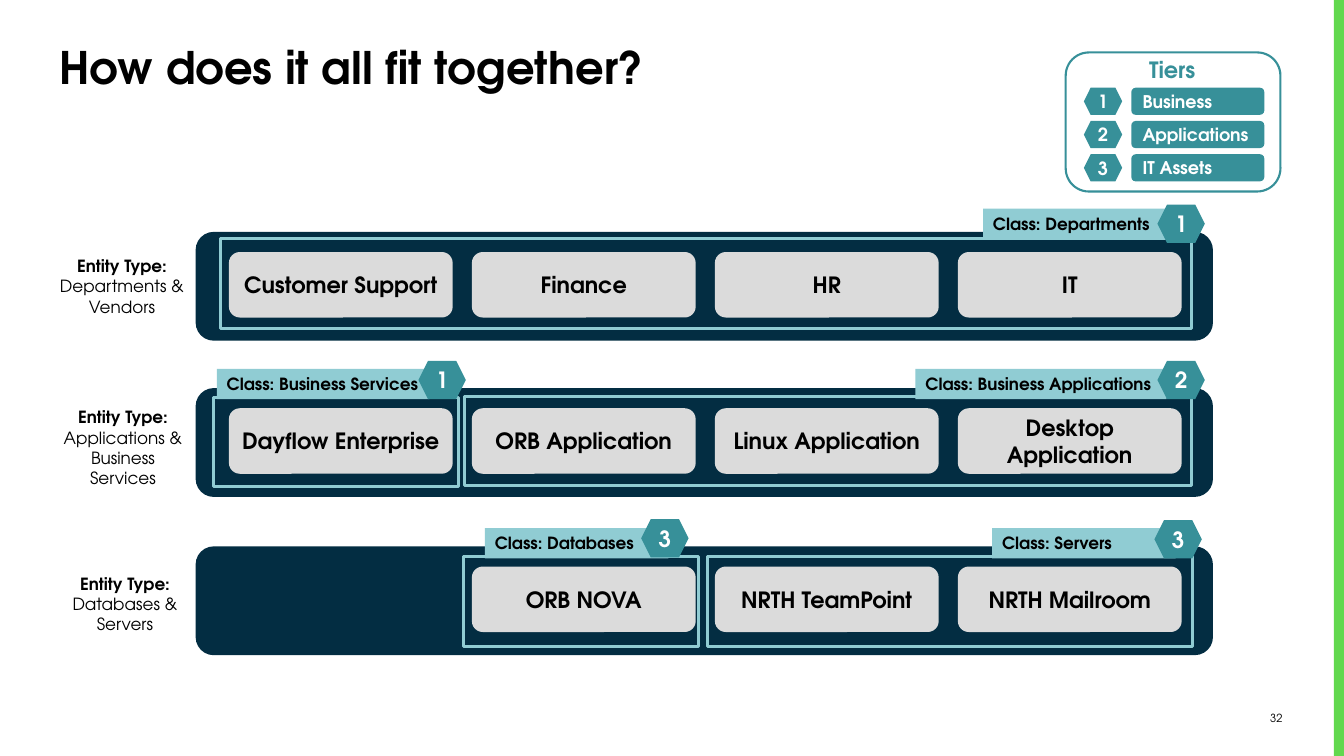
from dataclasses import dataclass

from pptx import Presentation
from pptx.dml.color import RGBColor
from pptx.enum.shapes import MSO_SHAPE
from pptx.enum.text import MSO_ANCHOR, PP_ALIGN
from pptx.util import Inches, Pt

RECT, ROUND, HEXAGON = MSO_SHAPE.RECTANGLE, MSO_SHAPE.ROUNDED_RECTANGLE, MSO_SHAPE.HEXAGON
LEFT, CENTER, RIGHT = PP_ALIGN.LEFT, PP_ALIGN.CENTER, PP_ALIGN.RIGHT
TOP, MIDDLE = MSO_ANCHOR.TOP, MSO_ANCHOR.MIDDLE

FONT = "TeX Gyre Adventor"
BLACK, WHITE, GREEN = "000000", "FFFFFF", "62D84E"
NAVY, TEAL, AQUA, GRAY = "032D42", "379099", "90CCD3", "DBDBDB"

BAND_LEFT, BAND_WIDTH, BAND_HEIGHT = 1.94, 10.09, 1.08
CARD_LEFT, CARD_STEP, CARD_WIDTH, CARD_HEIGHT = 2.27, 2.41, 2.22, 0.65
CARD_DROP = 0.2
FRAME_HEIGHT, TAG_HEIGHT = 0.89, 0.3
LEGEND_TOP, LEGEND_STEP, LEGEND_HEIGHT = 0.87, 0.33, 0.27


@dataclass(frozen=True)
class Box:
    left: float
    top: float
    width: float
    height: float


@dataclass(frozen=True)
class ClassGroup:
    """A framed set of cards with its class tag and tier number."""
    name: str
    tier: str
    frame_left: float
    frame_top: float
    frame_width: float
    tag_left: float
    tag_top: float
    tag_width: float
    badge_left: float
    badge_top: float


@dataclass(frozen=True)
class EntityBand:
    entity: str
    label_left: float
    label_top: float
    top: float
    first_column: int
    cards: tuple[str, ...]
    classes: tuple[ClassGroup, ...]


BANDS = (
    EntityBand("Departments & Vendors", 0.47, 2.49, 2.3, 0,
               ("Customer Support", "Finance", "HR", "IT"),
               (ClassGroup("Departments", "1", 2.19, 2.37, 9.63,
                           9.75, 2.07, 1.82, 11.48, 2.03),)),
    EntityBand("Applications & Business Services", 0.48, 3.99, 3.85, 0,
               ("Dayflow Enterprise", "ORB Application",
                "Linux Application", "Desktop Application"),
               (ClassGroup("Business Applications", "2", 4.61, 3.93, 7.21,
                           9.08, 3.66, 2.49, 11.48, 3.58),
                ClassGroup("Business Services", "1", 2.12, 3.94, 2.43,
                           2.15, 3.66, 2.11, 4.15, 3.58))),
    EntityBand("Databases & Servers", 0.5, 5.64, 5.42, 1,
               ("ORB NOVA", "NRTH TeamPoint", "NRTH Mailroom"),
               (ClassGroup("Servers", "3", 7.02, 5.52, 4.81,
                           9.84, 5.24, 1.82, 11.45, 5.16),
                ClassGroup("Databases", "3", 4.6, 5.52, 2.33,
                           4.81, 5.24, 1.82, 6.36, 5.15))),
)
TIERS = ("Business", "Applications", "IT Assets")


def rgb(value: str) -> RGBColor:
    return RGBColor.from_string(value)


def inches(box: Box) -> list[int]:
    return [Inches(v) for v in (box.left, box.top, box.width, box.height)]


def write(shape, runs: list[tuple[str, bool]], size: float, color: str = BLACK,
          align=LEFT, anchor=MIDDLE, side: float = 0.1, right: float | None = None) -> None:
    """Fill a shape with one paragraph of (text, bold) runs."""
    frame = shape.text_frame
    layout = {"word_wrap": True, "vertical_anchor": anchor,
              "margin_left": Inches(side),
              "margin_right": Inches(side if right is None else right),
              "margin_top": Inches(0.05 if anchor == TOP else 0),
              "margin_bottom": Inches(0.05 if anchor == TOP else 0)}
    for name, value in layout.items():
        setattr(frame, name, value)
    paragraph = frame.paragraphs[0]
    paragraph.alignment = align
    for text, bold in runs:
        run = paragraph.add_run()
        run.text = text
        for name, value in {"name": FONT, "size": Pt(size), "bold": bold}.items():
            setattr(run.font, name, value)
        run.font.color.rgb = rgb(color)


def add_block(shapes, preset, box: Box, fill: str | None = None,
              outline: str | None = None, weight: float = 1):
    block = shapes.add_shape(preset, *inches(box))
    block.shadow.inherit = False
    if fill:
        block.fill.solid()
        block.fill.fore_color.rgb = rgb(fill)
    else:
        block.fill.background()
    if outline:
        block.line.color.rgb = rgb(outline)
        block.line.width = Pt(weight)
    else:
        block.line.fill.background()
    return block


def add_text(shapes, box: Box, runs: list[tuple[str, bool]], size: float,
             color: str = BLACK, align=LEFT) -> None:
    write(shapes.add_textbox(*inches(box)), runs, size, color, align, TOP)


def add_badge(shapes, box: Box, tier: str, size: float) -> None:
    badge = add_block(shapes, HEXAGON, box, TEAL)
    write(badge, [(tier, True)], size, WHITE, CENTER, side=0)


def add_class(shapes, group: ClassGroup) -> None:
    add_block(shapes, RECT, Box(group.frame_left, group.frame_top,
                                group.frame_width, FRAME_HEIGHT),
              outline=AQUA, weight=2.25)
    tag = add_block(shapes, RECT, Box(group.tag_left, group.tag_top,
                                      group.tag_width, TAG_HEIGHT), AQUA)
    write(tag, [(f"Class: {group.name}", True)], 12, right=0)
    add_badge(shapes, Box(group.badge_left, group.badge_top, 0.47, 0.38), group.tier, 16)


def add_band(shapes, band: EntityBand) -> None:
    add_block(shapes, ROUND, Box(BAND_LEFT, band.top, BAND_WIDTH, BAND_HEIGHT), NAVY)
    for column, name in enumerate(band.cards, band.first_column):
        card = add_block(shapes, ROUND,
                         Box(CARD_LEFT + column * CARD_STEP, band.top + CARD_DROP,
                             CARD_WIDTH, CARD_HEIGHT), GRAY)
        write(card, [(name, True)], 16, align=CENTER)
    for group in band.classes:
        add_class(shapes, group)
    add_text(shapes, Box(band.label_left, band.label_top, 1.48, 0.64),
             [("Entity Type: ", True), (band.entity, False)], 12, align=CENTER)


def add_legend(shapes) -> None:
    legend = shapes.add_group_shape().shapes
    add_block(legend, ROUND, Box(10.57, 0.52, 2.13, 1.38), outline=TEAL, weight=1.5)
    add_text(legend, Box(11.3, 0.51, 1.14, 0.15), [("Tiers", True)], 16, TEAL)
    for index, tier in enumerate(TIERS):
        top = LEGEND_TOP + index * LEGEND_STEP
        add_badge(legend, Box(10.75, top, 0.38, LEGEND_HEIGHT), str(index + 1), 13)
        bar = add_block(legend, ROUND, Box(11.22, top, 1.32, LEGEND_HEIGHT), TEAL)
        write(bar, [(tier, True)], 12.5, WHITE)


def main() -> None:
    deck = Presentation()
    deck.slide_width, deck.slide_height = Inches(13.33), Inches(7.5)
    shapes = deck.slides.add_slide(deck.slide_layouts[6]).shapes
    add_text(shapes, Box(12.09, 7.01, 0.73, 0.25), [("32", False)], 8, align=RIGHT)
    add_block(shapes, RECT, Box(13.23, 0, 0.1, 7.5), GREEN)
    add_text(shapes, Box(0.49, 0.34, 12.24, 1.31),
             [("How does it all fit together?", True)], 32)
    for band in BANDS:
        add_band(shapes, band)
    add_legend(shapes)
    deck.save("out.pptx")


if __name__ == "__main__":
    main()
